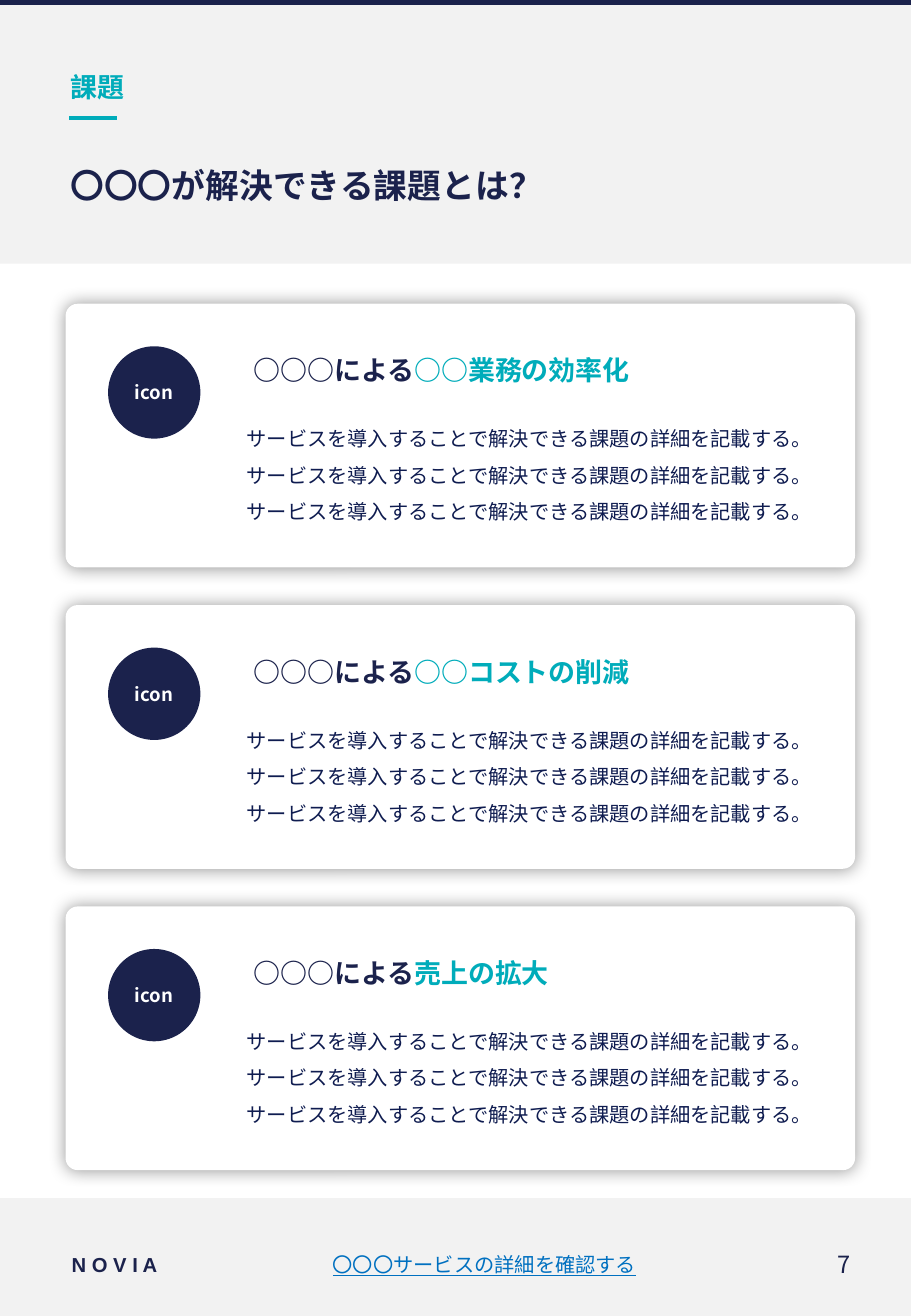
from lxml import etree
from pptx import Presentation, util as u
from pptx.dml.color import RGBColor
from pptx.enum import shapes, text
from pptx.oxml.ns import qn

NAVY, TEAL, GRAY, WHITE = "1B224C", "00ACBA", "F2F2F2", "FFFFFF"
INK, LINK = "0F1C50", "0070C0"
CJK = "Noto Sans CJK JP"
COLS, ROWS = 75, 108.3  # one grid cell is a tenth of an inch
SHAPE, ALIGN, ANCHOR = shapes.MSO_SHAPE, text.PP_ALIGN, text.MSO_ANCHOR


def rgb(value):
    return RGBColor.from_string(value)


class Page:
    def __init__(self, prs):
        self.cell_w = prs.slide_width / COLS
        self.cell_h = prs.slide_height / ROWS
        self.shapes = prs.slides.add_slide(prs.slide_layouts[6]).shapes

    def place(self, col, row, cols=0, rows=0):
        return [round(n * cell) for n, cell in zip(
            (col, row, cols, rows), (self.cell_w, self.cell_h) * 2)]

    def shape(self, kind, box, fill):
        sp = self.shapes.add_shape(kind, *self.place(*box))
        sp.shadow.inherit = False
        sp.fill.solid()
        sp.fill.fore_color.rgb = rgb(fill)
        sp.line.fill.background()
        return sp

    def rule(self, start, end, color, width):
        line = self.shapes.add_connector(
            shapes.MSO_CONNECTOR.STRAIGHT, *self.place(*start)[:2], *self.place(*end)[:2])
        line.line.color.rgb = rgb(color)
        line.line.width = u.Pt(width)
        etree.SubElement(line._element.spPr, qn("a:effectLst"))

    def glow(self, sp, blur, alpha):
        """Give the shape a soft black shadow on all sides."""
        effects = sp._element.spPr.find(qn("a:effectLst"))
        shadow = etree.SubElement(effects, qn("a:outerShdw"), blurRad=str(u.Pt(blur)),
                                  dist="0", dir="0", algn="ctr", rotWithShape="0")
        color = etree.SubElement(shadow, qn("a:srgbClr"), val="000000")
        etree.SubElement(color, qn("a:alpha"), val=str(alpha * 1000))

    def set_text(self, sp, runs, size, font="Arial", bold=False, align=ALIGN.LEFT,
                 anchor=ANCHOR.MIDDLE, inset=0.04, underline=False):
        """Fill the shape with one paragraph of (words, colour) runs."""
        tf = sp.text_frame
        tf.word_wrap = True
        tf.vertical_anchor = anchor
        tf.margin_left = tf.margin_right = u.Inches(inset)
        tf.margin_top = tf.margin_bottom = u.Inches(min(inset, 0.05))
        p = tf.paragraphs[0]
        p.alignment = align
        p.font.size, p.font.name = u.Pt(size), font
        p.font.bold, p.font.underline = bold, underline
        etree.SubElement(p._p.pPr.find(qn("a:defRPr")), qn("a:ea"), typeface=CJK)
        for words, color in runs:
            r = p.add_run()
            r.text = words
            r.font.color.rgb = rgb(color)
        return p

    def label(self, box, *runs, **style):
        return self.set_text(self.shapes.add_textbox(*self.place(*box)), runs, **style)

    def card(self, row, topic):
        panel = self.shape(SHAPE.ROUNDED_RECTANGLE, (5.4, row, 65, 21.7), WHITE)
        panel.adjustments[0] = 0.046
        self.glow(panel, 10, 40)
        self.label((19.9, row + 3.5, 48.2, 3.9), ("○○○による", NAVY), (topic, TEAL),
                   size=16, font=CJK, bold=True, inset=0.1)
        detail = "サービスを導入することで解決できる課題の詳細を記載する。" * 3
        p = self.label((19.9, row + 8.7, 48.2, 9.9), (detail, INK), size=12,
                       anchor=ANCHOR.TOP)
        p.line_spacing, p.space_after = 1.5, u.Pt(4.3)
        icon = self.shape(SHAPE.OVAL, (8.9, row + 3.5, 7.6, 7.6), NAVY)
        self.set_text(icon, [("icon", WHITE)], 11, CJK, bold=True, align=ALIGN.CENTER,
                      inset=0)


def main():
    prs = Presentation()
    prs.slide_width, prs.slide_height = u.Inches(7.5), u.Inches(10.83)
    page = Page(prs)

    page.shape(SHAPE.RECTANGLE, (0, 0, COLS, 21.7), GRAY)
    page.rule((5.7, 9.7), (9.6, 9.7), TEAL, 2.5)
    page.shape(SHAPE.RECTANGLE, (0, 0, COLS, 0.4), NAVY)
    page.shape(SHAPE.RECTANGLE, (0, 98.6, COLS, ROWS - 98.6), GRAY)
    page.label((5.4, 5.2, 65, 3.9), ("課題", TEAL), size=16, bold=True)
    page.label((5.4, 11.3, 65, 7.9), ("〇〇〇が解決できる課題とは？", NAVY), size=20, bold=True)

    topics = ["○○業務の効率化", "○○コストの削減", "売上の拡大"]
    for i, topic in enumerate(topics):
        page.card(25 + 24.8 * i, topic)

    page.label((5.5, 102.5, 15.7, 3.1), ("N O V I A", NAVY), size=12, bold=True)
    page.label((21.2, 102.5, 37.4, 3.1), ("〇〇〇サービスの詳細を確認する", LINK), size=12,
               align=ALIGN.CENTER, underline=True)
    page.label((58.6, 102.5, 11.8, 3.1), ("7", NAVY), size=14, font=CJK, align=ALIGN.RIGHT)
    prs.save("out.pptx")


if __name__ == "__main__":
    main()
